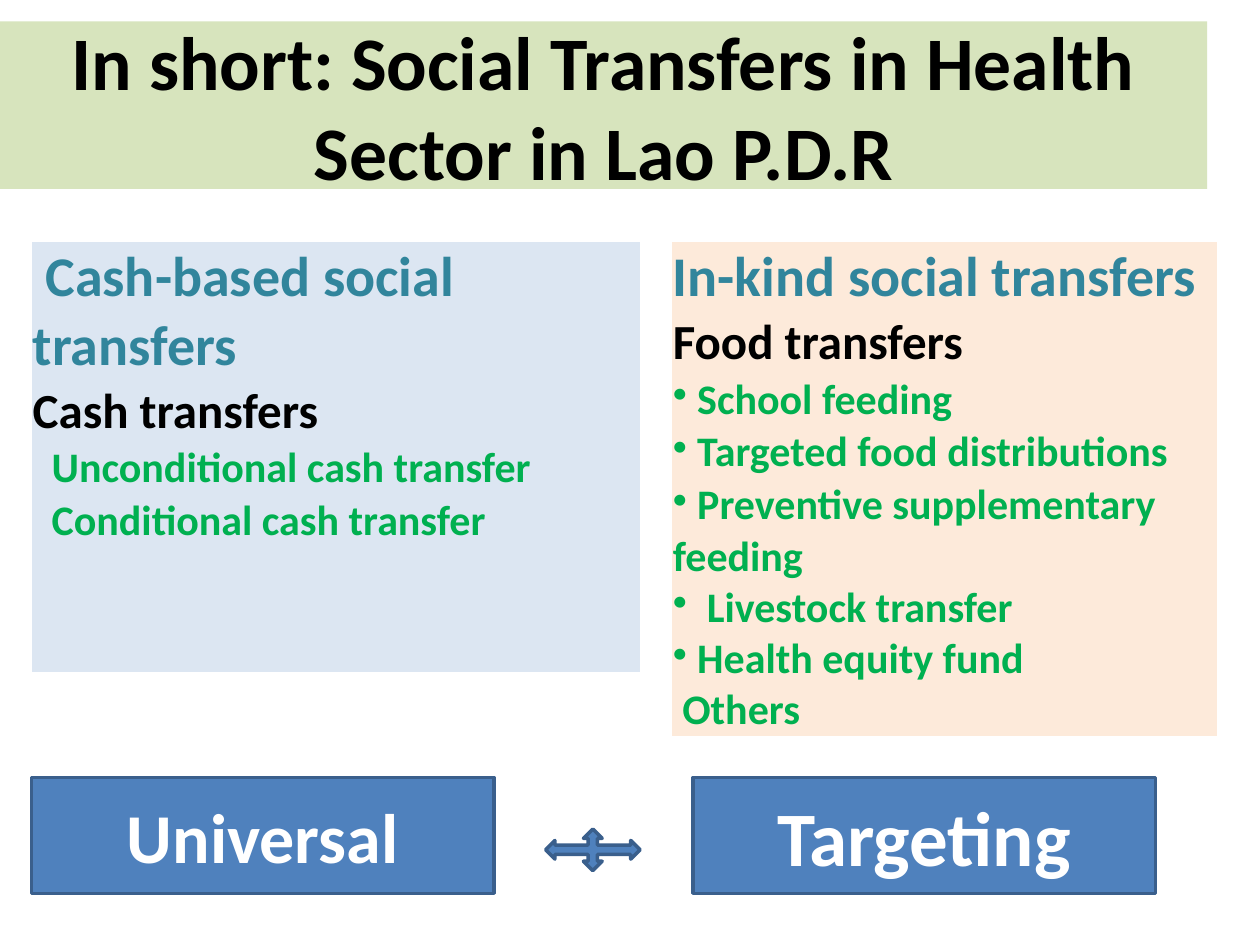
"""Build the slide on social transfers in the health sector."""
from dataclasses import dataclass

from lxml.etree import Element
from pptx import Presentation
from pptx.dml.color import RGBColor
from pptx.enum.shapes import MSO_SHAPE as Shape
from pptx.enum.text import MSO_ANCHOR as Anchor, MSO_AUTO_SIZE as AutoSize, PP_ALIGN as Align
from pptx.oxml.ns import qn
from pptx.util import Inches, Pt

FONT = "Calibri"
TEAL, GREEN, BLACK, WHITE = "31859C", "00B050", "000000", "FFFFFF"
PLAIN_TABLE_STYLE = "{2D5ABB26-0587-4C30-8999-92F81FD0307C}"


@dataclass
class Line:
    """One paragraph of a table cell, with its indents in inches."""
    text: str
    size: int = 24
    color: str = GREEN
    bullet: bool = False
    margin: float = 0
    indent: float = 0


CASH_ROWS = [
    (1.09, [Line(" Cash-based social transfers", 32, TEAL)]),
    (0.48, [Line("Cash transfers", 28, BLACK)]),
    (0.41, [Line("Unconditional cash transfer", margin=0.15)]),
    (0.41, [Line("Conditional cash transfer", margin=0.15)]),
    (1.0, []),
]
IN_KIND_ROWS = [
    (0.54, [Line("In-kind social transfers", 32, TEAL)]),
    (0.48, [Line("Food transfers", 28, BLACK)]),
    (0.41, [Line(" School feeding", bullet=True)]),
    (0.41, [Line(" Targeted food distributions", bullet=True)]),
    (2.05, [
        Line(" Preventive supplementary feeding", bullet=True),
        Line("Livestock transfer", bullet=True, margin=0.27, indent=-0.27),
        Line(" Health equity fund", bullet=True),
        Line(" Others"),
    ]),
]


def paint(fill, color):
    """Give a fill a solid colour."""
    fill.solid()
    fill.fore_color.rgb = RGBColor.from_string(color)


def write(paragraph, text, size, color):
    """Write bold text into a paragraph."""
    paragraph.text = text
    font = paragraph.font
    font.name, font.size, font.bold = FONT, Pt(size), True
    paint(font.fill, color)


def write_line(paragraph, line):
    """Write a table line with its indents and bullet."""
    write(paragraph, line.text, line.size, line.color)
    properties = paragraph._p.get_or_add_pPr()
    properties.set("marL", str(Inches(line.margin)))
    properties.set("indent", str(Inches(line.indent)))
    if line.bullet:
        properties.insert(0, Element(qn("a:buChar"), char="•"))


def fill_cell(cell, lines, color):
    """Colour a cell and write its lines."""
    paint(cell.fill, color)
    cell.vertical_anchor = Anchor.BOTTOM
    cell.margin_left = cell.margin_right = cell.margin_top = Inches(0.01)
    cell.margin_bottom = 0
    frame = cell.text_frame
    for index, line in enumerate(lines):
        paragraph = frame.add_paragraph() if index else frame.paragraphs[0]
        write_line(paragraph, line)


def add_transfer_table(slide, left, width, rows, color):
    """Add a one-column table of transfers."""
    height = sum(row_height for row_height, _ in rows)
    table = slide.shapes.add_table(
        len(rows), 1, Inches(left), Inches(1.92), Inches(width), Inches(height)).table
    table.first_row = table.horz_banding = False
    table._tbl.tblPr.find(qn("a:tableStyleId")).text = PLAIN_TABLE_STYLE
    for row, (row_height, lines) in zip(table.rows, rows):
        row.height = Inches(row_height)
        fill_cell(row.cells[0], lines, color)


def add_blue_shape(slide, kind, left, top, width, height):
    """Add an outlined blue shape."""
    shape = slide.shapes.add_shape(
        kind, Inches(left), Inches(top), Inches(width), Inches(height))
    shape.shadow.inherit = False
    paint(shape.fill, "4F81BD")
    paint(shape.line.fill, "3A5F8C")
    shape.line.width = Pt(2)
    return shape


def add_approach(slide, left, text, size):
    """Add a labelled box for one approach."""
    shape = add_blue_shape(slide, Shape.RECTANGLE, left, 6.17, 3.67, 0.92)
    shape.text_frame.vertical_anchor = Anchor.MIDDLE
    paragraph = shape.text_frame.paragraphs[0]
    write(paragraph, text, size, WHITE)
    paragraph.alignment = Align.CENTER


def set_title(slide, text):
    """Place and format the title."""
    title = slide.shapes.title
    title.left, title.top = 0, Inches(0.17)
    title.width, title.height = Inches(9.58), Inches(1.33)
    paint(title.fill, "D7E4BD")
    frame = title.text_frame
    frame.auto_size = AutoSize.NONE
    frame.vertical_anchor = Anchor.MIDDLE
    write(frame.paragraphs[0], text, 43.2, BLACK)
    frame.paragraphs[0].alignment = Align.CENTER


def main():
    """Build and save the presentation."""
    presentation = Presentation()
    presentation.slide_width, presentation.slide_height = Inches(10), Inches(7.5)
    slide = presentation.slides.add_slide(presentation.slide_layouts.get_by_name("Title Only"))
    set_title(slide, "In short: Social Transfers in Health Sector in Lao P.D.R")
    add_transfer_table(slide, 0.25, 4.83, CASH_ROWS, "DCE6F2")
    add_transfer_table(slide, 5.33, 4.33, IN_KIND_ROWS, "FDEADA")
    add_approach(slide, 0.25, "Universal", 40)
    add_approach(slide, 5.5, "Targeting", 44)
    add_blue_shape(slide, Shape.QUAD_ARROW, 4.33, 6.58, 0.75, 0.33)
    presentation.save("out.pptx")


if __name__ == "__main__":
    main()
